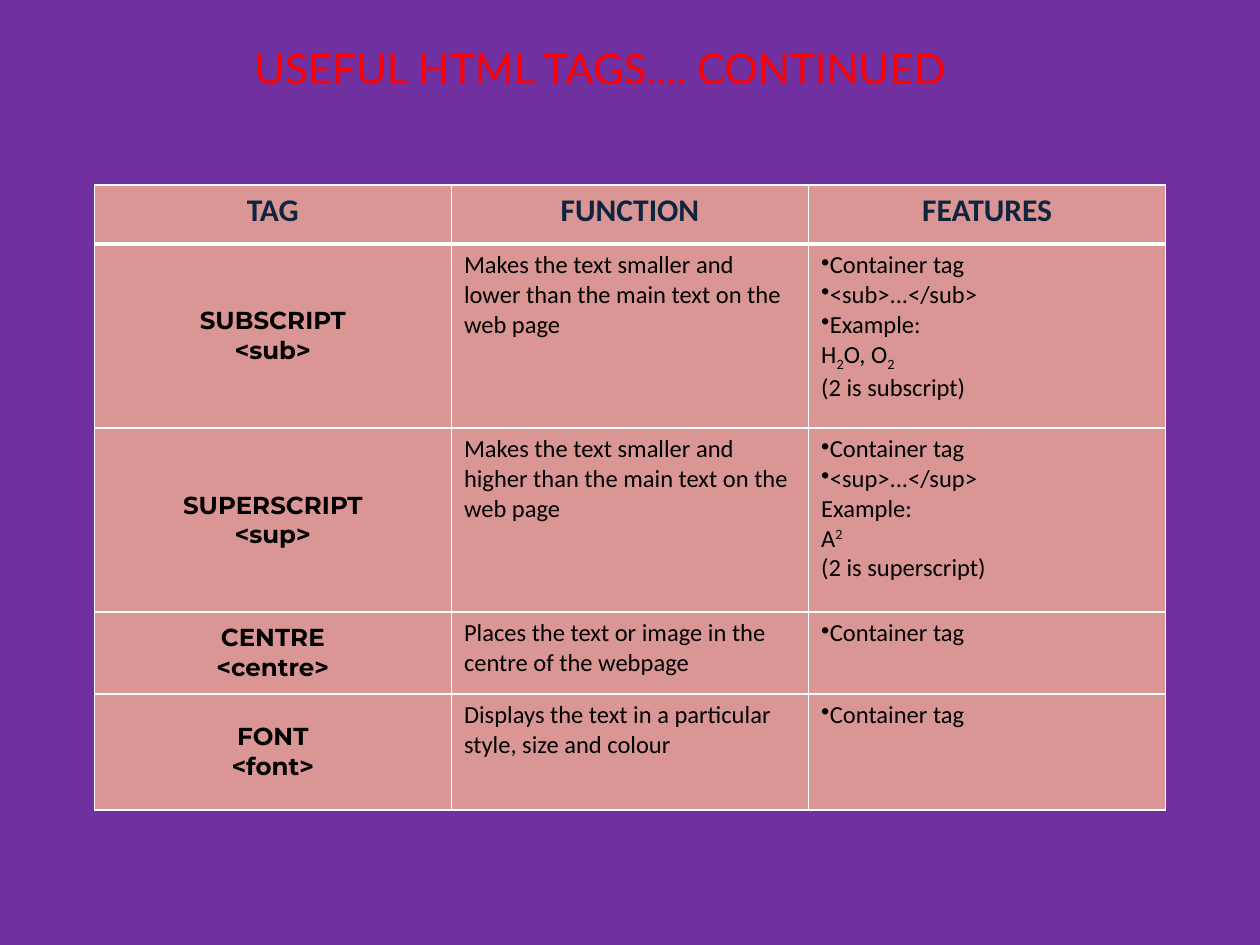
from dataclasses import dataclass
from typing import Any, NamedTuple

from lxml.etree import SubElement
from pptx import Presentation
from pptx.dml.color import RGBColor
from pptx.enum.text import MSO_ANCHOR, MSO_AUTO_SIZE, PP_ALIGN
from pptx.oxml.ns import qn
from pptx.util import Cm, Pt


@dataclass(frozen=True)
class Style:
    name: str
    size: Pt
    color: RGBColor
    bold: bool = False


@dataclass(frozen=True)
class Theme:
    background: RGBColor = RGBColor(0x70, 0x30, 0xA0)
    cell: RGBColor = RGBColor(0xD9, 0x96, 0x94)
    border: str = "FFFFFF"
    thin: Pt = Pt(1)
    thick: Pt = Pt(3)
    title: Style = Style("Lato", Pt(24), RGBColor(0xFF, 0, 0))
    header: Style = Style("Calibri", Pt(18), RGBColor(0x0F, 0x24, 0x3E), True)
    tag: Style = Style("Montserrat", Pt(14), RGBColor(0, 0, 0), True)
    body: Style = Style("Calibri", Pt(14), RGBColor(0, 0, 0))


class Run(NamedTuple):
    text: str
    baseline: int = 0


class Para(NamedTuple):
    runs: tuple[Run, ...]
    bullet: bool = False


class TagRow(NamedTuple):
    name: str
    tag: str
    function: str
    features: list[Para]
    height: Cm


def line(text: str) -> Para:
    return Para((Run(text),))


def item(text: str) -> Para:
    return Para((Run(text),), bullet=True)


THEME = Theme()
SUB_TWO = Run("2", -25)
SUPER_TWO = Run("2", 30)
CONTAINER = item("Container tag")
HEADINGS = ("TAG", "FUNCTION", "FEATURES")
HEADER_HEIGHT = Cm(1.19)
COLUMN_WIDTH = Cm(7.2)
ROWS = [
    TagRow("SUBSCRIPT", "<sub>",
           "Makes the text smaller and lower than the main text on the web page",
           [CONTAINER, item("<sub>...</sub>"), item("Example:"),
            Para((Run("H"), SUB_TWO, Run("O, O"), SUB_TWO)),
            line("(2 is subscript)")], Cm(3.71)),
    TagRow("SUPERSCRIPT", "<sup>",
           "Makes the text smaller and higher than the main text on the web page",
           [CONTAINER, item("<sup>...</sup>"), line("Example:"),
            Para((Run("A"), SUPER_TWO)),
            line("(2 is superscript)")], Cm(3.71)),
    TagRow("CENTRE", "<centre>",
           "Places the text or image in the centre of the webpage",
           [CONTAINER], Cm(1.65)),
    TagRow("FONT", "<font>",
           "Displays the text in a particular style, size and colour",
           [CONTAINER], Cm(2.34)),
]


def set_format(target: Any, values: dict[str, Any]) -> None:
    for name, value in values.items():
        setattr(target, name, value)


def write(tf: Any, paras: list[Para], style: Style, align: PP_ALIGN) -> None:
    for i, para in enumerate(paras):
        p = tf.add_paragraph() if i else tf.paragraphs[0]
        p.alignment = align
        if para.bullet:
            SubElement(p._p.get_or_add_pPr(), qn("a:buChar"), char="•")
        for run in para.runs:
            r = p.add_run()
            r.text = run.text
            set_format(r.font, {"name": style.name, "size": style.size,
                                "bold": style.bold})
            r.font.color.rgb = style.color
            if run.baseline:
                r._r.get_or_add_rPr().set("baseline", str(run.baseline * 1000))


def paint_cell(cell: Any, top: Pt, bottom: Pt) -> None:
    """Border all four sides, then fill: the schema wants lines first."""
    tcPr = cell._tc.get_or_add_tcPr()
    widths = {"lnL": THEME.thin, "lnR": THEME.thin, "lnT": top, "lnB": bottom}
    for side, width in widths.items():
        ln = SubElement(tcPr, qn(f"a:{side}"), w=str(int(width)))
        SubElement(SubElement(ln, qn("a:solidFill")), qn("a:srgbClr"),
                   val=THEME.border)
    cell.fill.solid()
    cell.fill.fore_color.rgb = THEME.cell


def add_title(s: Any, text: str) -> None:
    tf = s.shapes.add_textbox(Cm(3.5), Cm(0.74), Cm(17.2), Cm(1.28)).text_frame
    set_format(tf, {"word_wrap": True,
                    "auto_size": MSO_AUTO_SIZE.SHAPE_TO_FIT_TEXT})
    write(tf, [line(text)], THEME.title, PP_ALIGN.CENTER)


def add_tag_table(s: Any, rows: list[TagRow]) -> None:
    heights = [HEADER_HEIGHT, *(row.height for row in rows)]
    table = s.shapes.add_table(
        len(heights), len(HEADINGS), Cm(1.9), Cm(3.73),
        COLUMN_WIDTH * len(HEADINGS), sum(heights)).table
    table.horz_banding = False
    for column in table.columns:
        column.width = COLUMN_WIDTH
    for i, height in enumerate(heights):
        table.rows[i].height = height
        for cell in table.rows[i].cells:
            paint_cell(cell, THEME.thick if i == 1 else THEME.thin,
                       THEME.thick if i == 0 else THEME.thin)

    for cell, heading in zip(table.rows[0].cells, HEADINGS):
        write(cell.text_frame, [line(heading)], THEME.header, PP_ALIGN.CENTER)
    for i, row in enumerate(rows, start=1):
        tag, function, features = table.rows[i].cells
        tag.vertical_anchor = MSO_ANCHOR.MIDDLE
        write(tag.text_frame, [line(row.name), line(row.tag)],
              THEME.tag, PP_ALIGN.CENTER)
        write(function.text_frame, [line(row.function)],
              THEME.body, PP_ALIGN.LEFT)
        write(features.text_frame, row.features, THEME.body, PP_ALIGN.LEFT)


def main() -> None:
    prs = Presentation()
    set_format(prs, {"slide_width": Cm(25.4), "slide_height": Cm(19.05)})
    s = prs.slides.add_slide(prs.slide_layouts[6])
    s.background.fill.solid()
    s.background.fill.fore_color.rgb = THEME.background
    add_title(s, "USEFUL HTML TAGS.... CONTINUED")
    add_tag_table(s, ROWS)
    prs.save("out.pptx")


if __name__ == "__main__":
    main()
